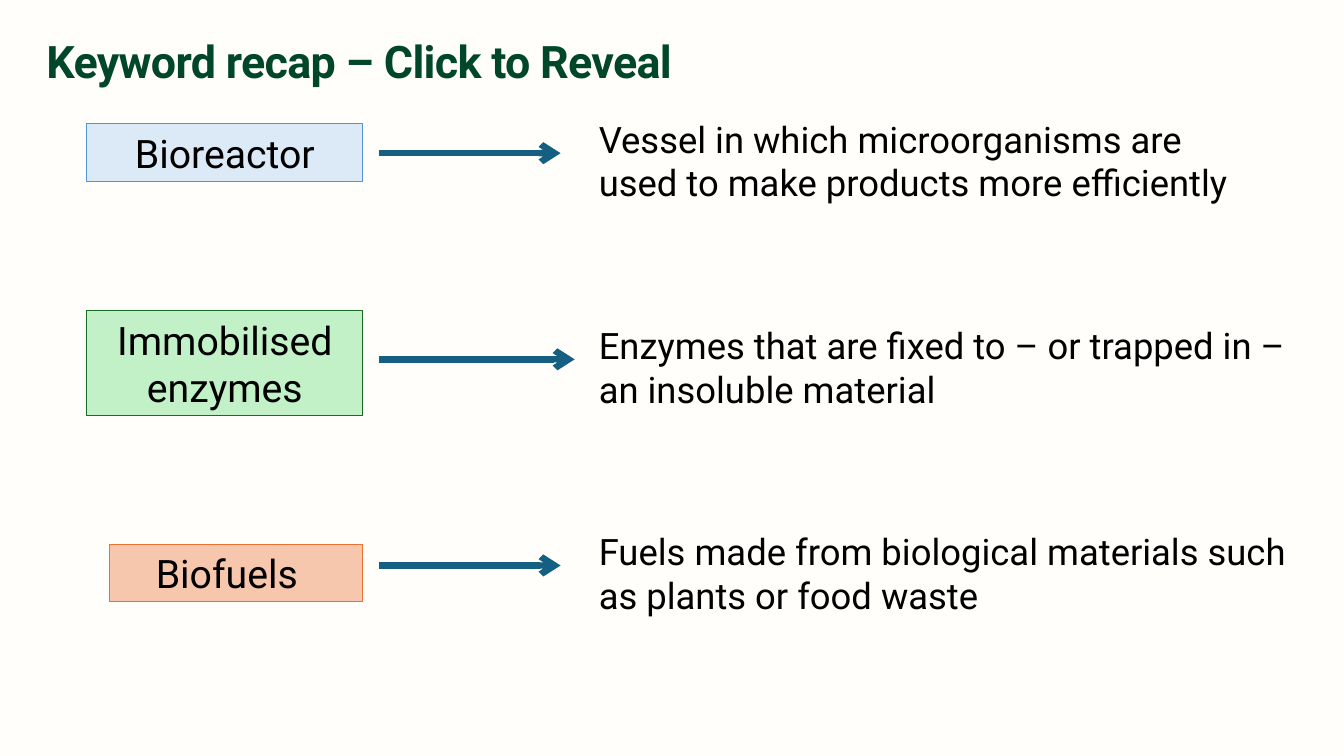
from pptx import Presentation
from pptx.dml.color import RGBColor as RGB
from pptx.enum.shapes import MSO_CONNECTOR as Link, MSO_SHAPE as Shape
from pptx.enum.text import MSO_ANCHOR as Anchor, PP_ALIGN as Align
from pptx.oxml.ns import qn
from pptx.util import Inches, Pt
from lxml import etree

TOP, PITCH = 1.11, 2.045
ROWS = [
    ("Bioreactor", (0.86, 0.12, 2.74, 0.57), "DCEAF7", "4E95D9", 0.1, 1.8,
     "Vessel in which microorganisms are used to make products more efficiently", 6.81),
    ("Immobilised enzymes", (0.86, -0.07, 2.74, 1.04), "C2F1C8", "196B24", 0.1, 1.94,
     "Enzymes that are fixed to – or trapped in – an insoluble material", 7.15),
    ("Biofuels", (1.09, 0.2, 2.51, 0.57), "F6C6AD", "E97132", 0.29, 1.8,
     "Fuels made from biological materials such as plants or food waste", 7.15),
]


def paint(part, color):
    part.solid()
    part.fore_color.rgb = RGB.from_string(color)


def write(frame, text, size, color="000000", align=Align.LEFT, bold=False):
    frame.word_wrap = True
    para = frame.paragraphs[0]
    para.text = text
    para.alignment = align
    font = para.runs[0].font
    font.name, font.size, font.bold = "Roboto", Pt(size), bold
    font.color.rgb = RGB.from_string(color)
    return para


def add_title(slide, left, top, width, height):
    title = slide.shapes.title
    title.left, title.top = Inches(left), Inches(top)
    title.width, title.height = Inches(width), Inches(height)
    title.text_frame.vertical_anchor = Anchor.TOP
    para = write(title.text_frame, "Keyword recap – Click to Reveal", 32, "00472A", bold=True)
    para.line_spacing = 0.9
    para.runs[0].font._element.set("spc", "-50")


def add_term(slide, text, box, fill, edge, inset):
    term = slide.shapes.add_shape(Shape.RECTANGLE, *map(Inches, box))
    term.shadow.inherit = False
    paint(term.fill, fill)
    paint(term.line.fill, edge)
    term.line.width = Pt(0.75)
    frame = term.text_frame
    frame.margin_right = Inches(inset)
    frame.vertical_anchor = Anchor.TOP
    write(frame, text, 28, align=Align.CENTER)


def add_arrow(slide, left, top, width):
    arrow = slide.shapes.add_connector(
        Link.STRAIGHT, Inches(left), Inches(top), Inches(left + width), Inches(top))
    paint(arrow.line.fill, "156082")
    arrow.line.width = Pt(4.5)
    etree.SubElement(arrow.line._get_or_add_ln(), qn("a:tailEnd"), type="arrow")
    etree.SubElement(arrow._element.spPr, qn("a:effectLst"))


def add_row(slide, top, row):
    name, (left, drop, width, height), fill, edge, inset, reach, text, span = row
    add_term(slide, name, (left, top + drop, width, height), fill, edge, inset)
    add_arrow(slide, 3.76, top + 0.41, reach)
    note = slide.shapes.add_textbox(Inches(5.84), Inches(top), Inches(span), Inches(0.98))
    write(note.text_frame, text, 26)


def main():
    deck = Presentation()
    deck.slide_width, deck.slide_height = Inches(13.33), Inches(7.5)
    slide = deck.slides.add_slide(deck.slide_layouts[5])
    paint(slide.background.fill, "FFFEFA")
    add_title(slide, 0.36, 0.34, 10.1, 0.89)
    for i, row in enumerate(ROWS):
        add_row(slide, TOP + i * PITCH, row)
    deck.save("out.pptx")


if __name__ == "__main__":
    main()
